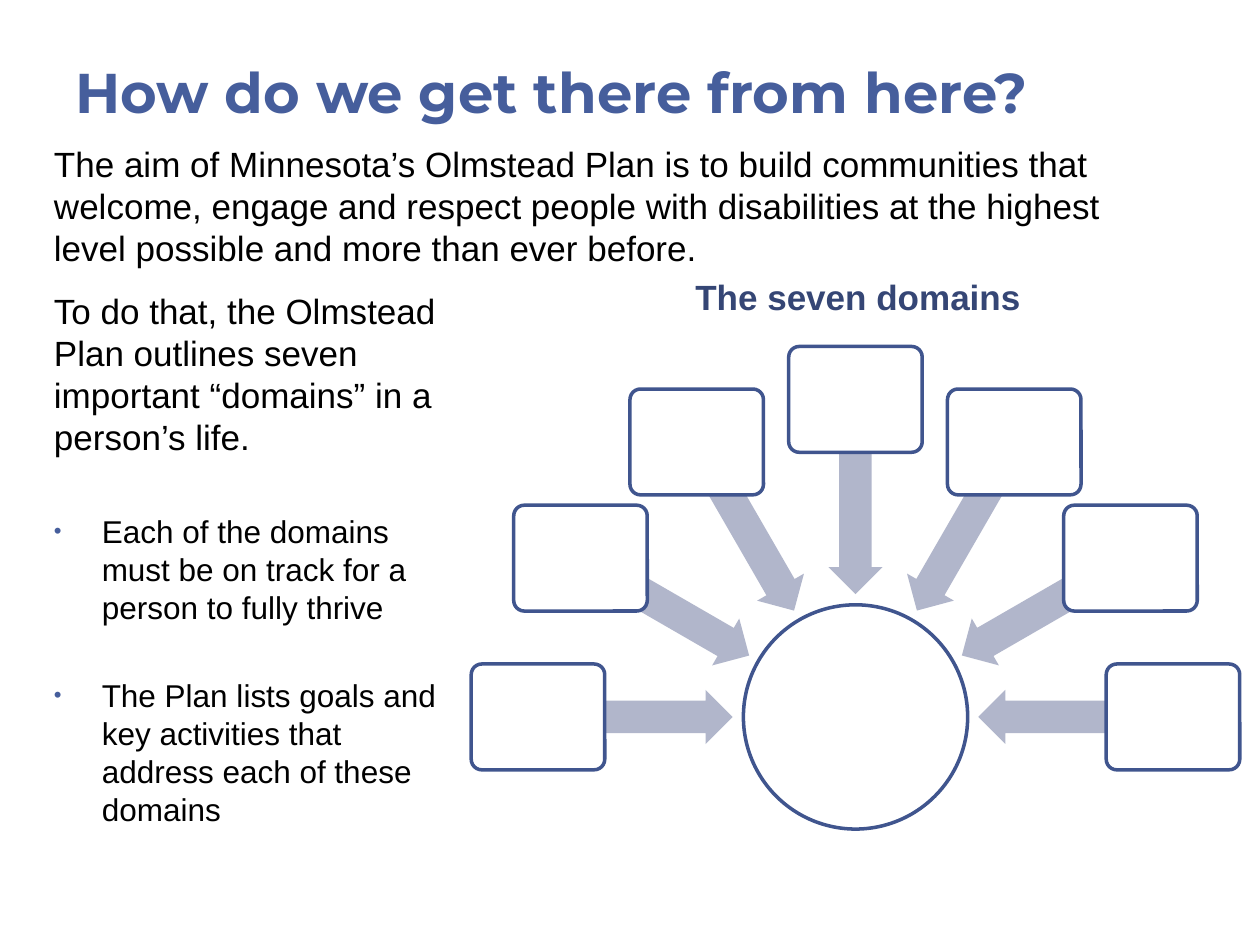
from dataclasses import dataclass
from math import cos, radians, sin

from lxml import etree
from pptx import Presentation
from pptx import util as u
from pptx.dml.color import RGBColor
from pptx.enum import shapes, text
from pptx.oxml.ns import qn
from pptx.slide import Slide

TITLE_BLUE = RGBColor(0x46, 0x5E, 0x9C)
HEADING_BLUE = RGBColor(0x35, 0x46, 0x75)
OUTLINE_BLUE = RGBColor(0x40, 0x55, 0x8E)
ARROW_GREY = RGBColor(0xB1, 0xB6, 0xCB)
BLACK = RGBColor(0, 0, 0)
WHITE = RGBColor(0xFF, 0xFF, 0xFF)

HUB_X, HUB_Y, HUB_SIZE = 6.79, 5.69, 1.78
DOMAIN_RADIUS, ARROW_RADIUS = 2.52, 1.74


@dataclass
class SlideBuilder:
    slide: Slide
    font: str = "Arial"
    outline_width: float = 2

    def textbox(self, left, top, width, height, anchor=text.MSO_ANCHOR.TOP):
        box = self.slide.shapes.add_textbox(*map(u.Inches, (left, top, width, height)))
        frame = box.text_frame
        frame.word_wrap = True
        frame.vertical_anchor = anchor
        return frame

    def add_span(self, para, words, size=20, color=BLACK, bold=False, font=None):
        span = para.add_run()
        span.text = words
        span.font.size = u.Pt(size)
        span.font.name = font or self.font
        span.font.bold = bold
        span.font.color.rgb = color

    def bullet(self, frame, words, space_before):
        para = frame.add_paragraph()
        para.space_before = u.Pt(space_before)
        self.add_span(para, words, size=18)
        props = para._p.get_or_add_pPr()
        props.set("marL", str(u.Inches(0.38)))
        props.set("indent", str(u.Inches(-0.38)))
        color = etree.SubElement(props, qn("a:buClr"))
        etree.SubElement(color, qn("a:srgbClr"), val=str(TITLE_BLUE))
        etree.SubElement(props, qn("a:buSzPct"), val="70000")
        etree.SubElement(props, qn("a:buFont"), typeface=self.font)
        etree.SubElement(props, qn("a:buChar"), char="•")

    def shape(self, kind, center_x, center_y, width, height, fill, outline=None):
        shape = self.slide.shapes.add_shape(
            kind,
            u.Inches(center_x - width / 2),
            u.Inches(center_y - height / 2),
            u.Inches(width),
            u.Inches(height),
        )
        shape.shadow.inherit = False
        shape.fill.solid()
        shape.fill.fore_color.rgb = fill
        if outline is None:
            shape.line.fill.background()
        else:
            shape.line.color.rgb = outline
            shape.line.width = u.Pt(self.outline_width)
        return shape

    def hub(self):
        self.shape(shapes.MSO_SHAPE.OVAL, HUB_X, HUB_Y, HUB_SIZE, HUB_SIZE,
                   WHITE, OUTLINE_BLUE)

    def around_hub(self, angle, radius):
        turn = radians(angle)
        return HUB_X + radius * cos(turn), HUB_Y + radius * sin(turn)

    def arrow(self, angle):
        arrow = self.shape(shapes.MSO_SHAPE.LEFT_ARROW,
                           *self.around_hub(angle, ARROW_RADIUS), 1.53, 0.43, ARROW_GREY)
        arrow.adjustments[0] = 0.6
        arrow.adjustments[1] = 0.5
        arrow.rotation = angle % 360

    def domain(self, angle):
        box = self.shape(shapes.MSO_SHAPE.ROUNDED_RECTANGLE,
                         *self.around_hub(angle, DOMAIN_RADIUS), 1.06, 0.84,
                         WHITE, OUTLINE_BLUE)
        box.adjustments[0] = 0.1


def main():
    deck = Presentation()
    deck.slide_width, deck.slide_height = u.Inches(10), u.Inches(7.5)
    page = SlideBuilder(deck.slides.add_slide(deck.slide_layouts[6]))

    title = page.textbox(0.5, 0.17, 9.08, 0.87, text.MSO_ANCHOR.BOTTOM)
    page.add_span(title.paragraphs[0], "How do we get there from here?",
                  32, TITLE_BLUE, True, "Montserrat")

    aim = page.textbox(0.33, 1.08, 9.08, 1.11)
    page.add_span(aim.paragraphs[0],
                  "The aim of Minnesota’s Olmstead Plan is to build communities that welcome, "
                  "engage and respect people with disabilities at the highest level possible "
                  "and more than ever before.")

    body = page.textbox(0.33, 2.25, 3.33, 4.08)
    body.paragraphs[0].space_before = u.Pt(4)
    page.add_span(body.paragraphs[0],
                  "To do that, the Olmstead Plan outlines seven important “domains” "
                  "in a person’s life.")
    page.bullet(body, "Each of the domains must be on track for a person to fully thrive", 31)
    page.bullet(body, "The Plan lists goals and key activities that address each of these "
                      "domains", 29)

    heading = page.textbox(5.42, 2.14, 2.92, 0.44)
    page.add_span(heading.paragraphs[0], "The seven domains", 20, HEADING_BLUE, True)

    page.hub()
    for angle in range(180, 361, 30):
        page.arrow(angle)
        page.domain(angle)

    deck.save("out.pptx")


if __name__ == "__main__":
    main()
